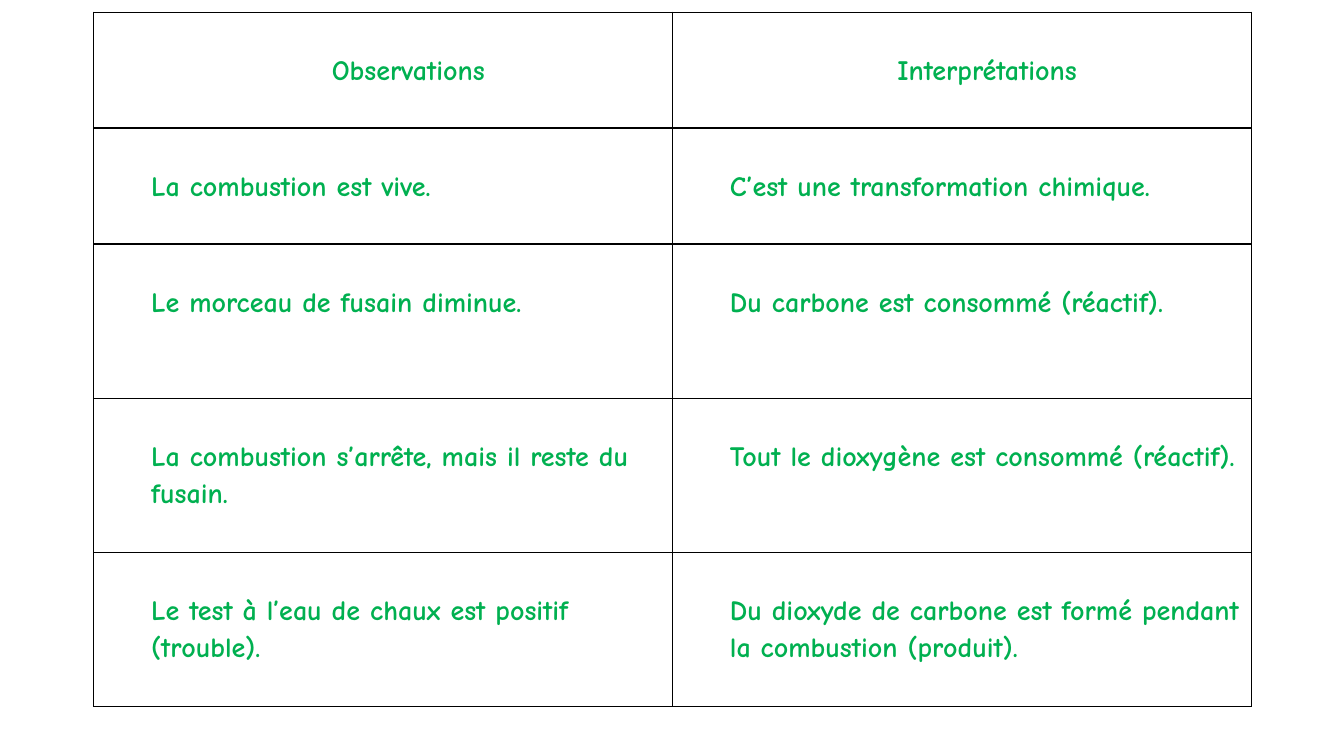
from dataclasses import dataclass

from lxml.etree import fromstring
from pptx import Presentation
from pptx.dml.color import RGBColor
from pptx.enum.text import PP_ALIGN
from pptx.oxml.ns import nsdecls
from pptx.slide import Slide
from pptx.table import _Cell
from pptx.util import Inches, Pt

GREEN = RGBColor(0x00, 0xB0, 0x50)
BLACK = RGBColor(0x00, 0x00, 0x00)
FONT = "Comic Neue"
COLUMN_WIDTH = 5.74


@dataclass
class Row:
    observation: str
    interpretation: str
    height: float
    align: PP_ALIGN = PP_ALIGN.LEFT


ROWS = [
    Row("Observations", "Interprétations", 1.15, PP_ALIGN.CENTER),
    Row("La combustion est vive.", "C’est une transformation chimique.", 1.15),
    Row("Le morceau de fusain diminue.", "Du carbone est consommé (réactif).", 1.53),
    Row("La combustion s’arrête, mais il reste du fusain.",
        "Tout le dioxygène est consommé (réactif).", 1.53),
    Row("Le test à l’eau de chaux est positif (trouble).",
        "Du dioxyde de carbone est formé pendant la combustion (produit).", 1.53),
]


def add_borders(cell: _Cell) -> None:
    tc_pr = cell._tc.get_or_add_tcPr()
    for index, side in enumerate("LRTB"):
        tc_pr.insert(index, fromstring(
            f'<a:ln{side} {nsdecls("a")} w="{Pt(1)}"><a:solidFill>'
            f'<a:srgbClr val="{BLACK}"/></a:solidFill></a:ln{side}>'))


def fill_cell(cell: _Cell, text: str, align: PP_ALIGN) -> None:
    cell.fill.background()
    add_borders(cell)
    cell.margin_left, cell.margin_right = Inches(0.57), Inches(0.07)
    cell.margin_top, cell.margin_bottom = Inches(0.38), Inches(0)
    cell.text_frame.text = text
    p = cell.text_frame.paragraphs[0]
    p.alignment = align
    p.line_spacing = 1.15
    font = p.runs[0].font
    font.name, font.size, font.bold = FONT, Pt(20), True
    font.color.rgb = GREEN


def add_results_table(s: Slide, rows: list[Row]) -> None:
    height = sum(row.height for row in rows)
    table = s.shapes.add_table(len(rows), 2, Inches(0.93), Inches(0.12),
                               Inches(2 * COLUMN_WIDTH), Inches(height)).table
    table.first_row = table.horz_banding = False
    for column in table.columns:
        column.width = Inches(COLUMN_WIDTH)
    for i, row in enumerate(rows):
        table.rows[i].height = Inches(row.height)
        for j, text in enumerate((row.observation, row.interpretation)):
            fill_cell(table.cell(i, j), text, row.align)


def main() -> None:
    prs = Presentation()
    prs.slide_width, prs.slide_height = Inches(13.33), Inches(7.5)
    s = prs.slides.add_slide(prs.slide_layouts[6])
    add_results_table(s, ROWS)
    prs.save("out.pptx")


if __name__ == "__main__":
    main()
